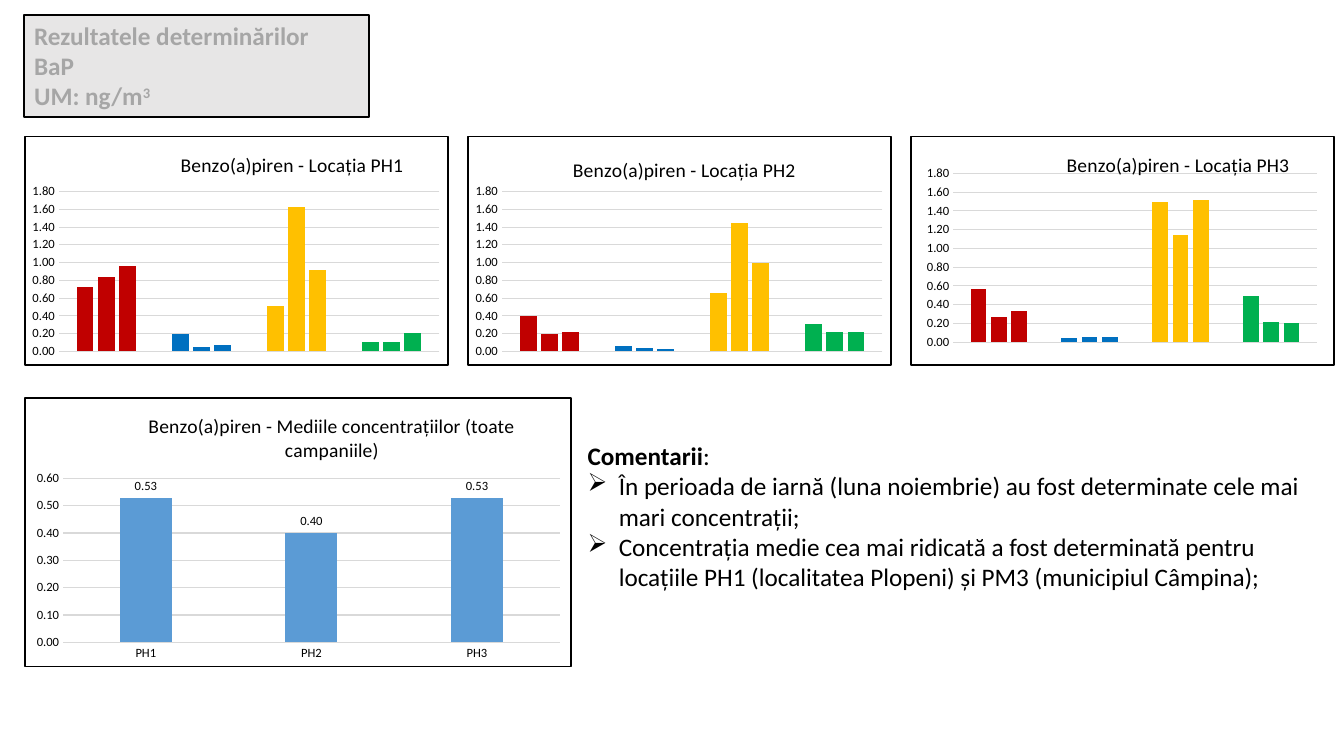
"""Build the slide of benzo(a)pyrene results with four column charts and comments."""
from dataclasses import dataclass
from typing import Any

from lxml.etree import SubElement
from pptx import Presentation
from pptx.chart.data import CategoryChartData
from pptx.dml.color import RGBColor
from pptx.enum.chart import XL_CHART_TYPE as ChartType
from pptx.enum.chart import XL_LABEL_POSITION as LabelPosition
from pptx.enum.chart import XL_TICK_MARK as TickMark
from pptx.enum.shapes import MSO_SHAPE as Preset
from pptx.enum.text import MSO_ANCHOR as Anchor
from pptx.enum.text import PP_ALIGN as Align
from pptx.oxml import parse_xml
from pptx.oxml.ns import nsdecls, qn
from pptx.util import Inches, Pt

BLACK = RGBColor(0x00, 0x00, 0x00)
WHITE = RGBColor(0xFF, 0xFF, 0xFF)
PALE_GREY = RGBColor(0xE7, 0xE6, 0xE6)
HEADING_GREY = RGBColor(0xA6, 0xA6, 0xA6)
GRID_GREY = RGBColor(0xD9, 0xD9, 0xD9)
MEAN_BLUE = RGBColor(0x5B, 0x9B, 0xD5)
CAMPAIGN_COLOURS = (
    RGBColor(0xC0, 0x00, 0x00),
    RGBColor(0x00, 0x70, 0xC0),
    RGBColor(0xFF, 0xC0, 0x00),
    RGBColor(0x00, 0xB0, 0x50),
)
FONT = "Calibri"
WIDTH, HEIGHT = Inches(13.33), Inches(7.5)
COLUMNS, ROWS = 80, 45
LEFT_COLUMN, CHART_PITCH = 1.44, 26.37


@dataclass(frozen=True)
class Area:
    """A rectangle in grid columns and rows."""

    column: float
    row: float
    columns: float
    rows: float

    def box(self) -> tuple[int, int, int, int]:
        """Return left, top, width and height as lengths."""
        return (
            round(self.column * WIDTH / COLUMNS),
            round(self.row * HEIGHT / ROWS),
            round(self.columns * WIDTH / COLUMNS),
            round(self.rows * HEIGHT / ROWS),
        )


@dataclass(frozen=True)
class ColumnChart:
    """A column chart, with its layouts as shares of the chart's size."""

    title: str
    area: Area
    categories: tuple[str, ...]
    series: tuple[tuple[float, ...], ...]
    title_at: tuple[float, float]
    plot_at: tuple[float, float, float, float]
    maximum: float = 1.8
    step: float = 0.2
    means: bool = False


def location_chart(
    number: int,
    series: tuple[tuple[float, ...], ...],
    title_at: tuple[float, float],
    plot_at: tuple[float, float, float, float] = (0.08, 0.24, 0.9, 0.7),
) -> ColumnChart:
    """Describe the chart of one location in the top row."""
    area = Area(LEFT_COLUMN + (number - 1) * CHART_PITCH, 8.1, 25.26, 13.68)
    title = f"Benzo(a)piren - Locația PH{number}"
    return ColumnChart(title, area, ("1", "2", "3", "4"), series, title_at, plot_at)


CHARTS = (
    location_chart(
        1,
        ((0.72, 0.2, 0.51, 0.11), (0.84, 0.05, 1.63, 0.11), (0.96, 0.07, 0.92, 0.21)),
        (0.36, 0.05),
    ),
    location_chart(
        2,
        ((0.4, 0.06, 0.66, 0.31), (0.2, 0.04, 1.45, 0.22), (0.22, 0.03, 0.99, 0.22)),
        (0.24, 0.07),
    ),
    location_chart(
        3,
        ((0.57, 0.05, 1.49, 0.49), (0.27, 0.06, 1.14, 0.22), (0.33, 0.06, 1.51, 0.21)),
        (0.36, 0.05),
        (0.1, 0.16, 0.86, 0.74),
    ),
    ColumnChart(
        "Benzo(a)piren - Mediile concentrațiilor (toate campaniile)",
        Area(LEFT_COLUMN, 23.64, 32.58, 16.08),
        ("PH1", "PH2", "PH3"),
        ((0.53, 0.4, 0.53),),
        (0.22, 0.04),
        (0.07, 0.3, 0.91, 0.61),
        maximum=0.6,
        step=0.1,
        means=True,
    ),
)
COMMENTS = (
    "În perioada de iarnă (luna noiembrie) au fost determinate cele mai mari concentrații;",
    "Concentrația medie cea mai ridicată a fost determinată pentru locațiile PH1 "
    "(localitatea Plopeni) și PM3 (municipiul Câmpina);",
)


def format_font(font: Any, size: float, colour: RGBColor = BLACK, bold: bool = False) -> None:
    """Set the typeface, size, colour and weight of a font."""
    font.name, font.size, font.bold = FONT, Pt(size), bold
    font.color.rgb = colour


def add_text(
    paragraph: Any, text: str, *, size: float = 18, colour: RGBColor = BLACK,
    bold: bool = False, superscript: bool = False,
) -> None:
    """Append a formatted run to a paragraph."""
    run = paragraph.add_run()
    run.text = text
    format_font(run.font, size, colour, bold)
    if superscript:
        run.font._element.set("baseline", "30000")


def set_layout(element: Any, index: int, shares: tuple[float, ...]) -> None:
    """Place a chart part by shares of the chart's size."""
    for existing in element.findall(qn("c:layout")):
        element.remove(existing)
    layout = parse_xml(f"<c:layout {nsdecls('c')}><c:manualLayout/></c:layout>")
    settings = [("xMode", "edge"), ("yMode", "edge"), *zip("xywh", shares)]
    if len(shares) == 4:
        settings.insert(0, ("layoutTarget", "inner"))
    for name, value in settings:
        SubElement(layout[0], qn(f"c:{name}")).set("val", str(value))
    element.insert(index, layout)


def add_column_chart(slide: Any, item: ColumnChart) -> None:
    """Draw a column chart with its frame, axes and colours."""
    data = CategoryChartData(number_format="0.00")
    data.categories = item.categories
    for number, values in enumerate(item.series, 1):
        data.add_series(f"Series {number}", values)
    chart = slide.shapes.add_chart(ChartType.COLUMN_CLUSTERED, *item.area.box(), data).chart
    chart.has_legend = False
    format_font(chart.font, 10)
    chart._chartSpace.find(qn("c:chart")).addnext(parse_xml(
        f'<c:spPr {nsdecls("c", "a")}><a:solidFill><a:srgbClr val="{WHITE}"/></a:solidFill>'
        f'<a:ln w="{Pt(1)}"><a:solidFill><a:srgbClr val="{BLACK}"/></a:solidFill></a:ln></c:spPr>'
    ))
    chart.has_title = True
    add_text(chart.chart_title.text_frame.paragraphs[0], item.title, size=14)
    set_layout(chart.chart_title._element, 1, item.title_at)
    set_layout(chart._chartSpace.chart.plotArea, 0, item.plot_at)

    values, categories = chart.value_axis, chart.category_axis
    for axis in (values, categories):
        axis.major_tick_mark = axis.minor_tick_mark = TickMark.NONE
        format_font(axis.tick_labels.font, 9)
    values.minimum_scale, values.maximum_scale = 0, item.maximum
    values.major_unit = item.step
    values.tick_labels.number_format = "0.00"
    values.tick_labels.number_format_is_linked = False
    values.format.line.fill.background()
    for line in (values.major_gridlines.format.line, categories.format.line):
        line.color.rgb, line.width = GRID_GREY, Pt(0.75)
    categories.visible = item.means

    plot = chart.plots[0]
    plot.gap_width, plot.overlap, plot.vary_by_categories = 219, -27, False
    for series in plot.series:
        series.invert_if_negative = False
        series.format.fill.solid()
        series.format.fill.fore_color.rgb = MEAN_BLUE
        for index, colour in enumerate(() if item.means else CAMPAIGN_COLOURS):
            fill = series.points[index].format.fill
            fill.solid()
            fill.fore_color.rgb = colour
    plot.has_data_labels = item.means
    if item.means:
        labels = plot.data_labels
        labels.show_value, labels.position = True, LabelPosition.OUTSIDE_END
        labels.number_format, labels.number_format_is_linked = "0.00", False
        format_font(labels.font, 9)


def add_heading(slide: Any) -> None:
    """Draw the grey heading box."""
    area = Area(LEFT_COLUMN, 0.9, 20.52, 6.06)
    shape = slide.shapes.add_shape(Preset.RECTANGLE, *area.box())
    shape.shadow.inherit = False
    shape.fill.solid()
    shape.fill.fore_color.rgb = PALE_GREY
    shape.line.color.rgb, shape.line.width = BLACK, Pt(1)
    frame = shape.text_frame
    frame.word_wrap, frame.vertical_anchor = True, Anchor.TOP
    for index, text in enumerate(("Rezultatele determinărilor", "BaP", "UM: ng/m")):
        paragraph = frame.add_paragraph() if index else frame.paragraphs[0]
        paragraph.alignment = Align.LEFT
        add_text(paragraph, text, colour=HEADING_GREY, bold=True)
    add_text(paragraph, "3", colour=HEADING_GREY, bold=True, superscript=True)


def add_comments(slide: Any) -> None:
    """Write the comments with arrow bullets."""
    frame = slide.shapes.add_textbox(*Area(34.38, 25.92, 45.6, 9.72).box()).text_frame
    frame.word_wrap = True
    add_text(frame.paragraphs[0], "Comentarii", bold=True)
    add_text(frame.paragraphs[0], ":")
    for comment in COMMENTS:
        paragraph = frame.add_paragraph()
        properties = paragraph._p.get_or_add_pPr()
        properties.set("marL", str(Inches(0.31)))
        properties.set("indent", str(Inches(-0.31)))
        SubElement(properties, qn("a:buChar")).set("char", "➢")
        add_text(paragraph, comment)


def main() -> None:
    """Build and save the presentation."""
    presentation = Presentation()
    presentation.slide_width, presentation.slide_height = WIDTH, HEIGHT
    slide = presentation.slides.add_slide(presentation.slide_layouts[6])
    add_heading(slide)
    for item in CHARTS:
        add_column_chart(slide, item)
    add_comments(slide)
    presentation.save("out.pptx")


if __name__ == "__main__":
    main()
